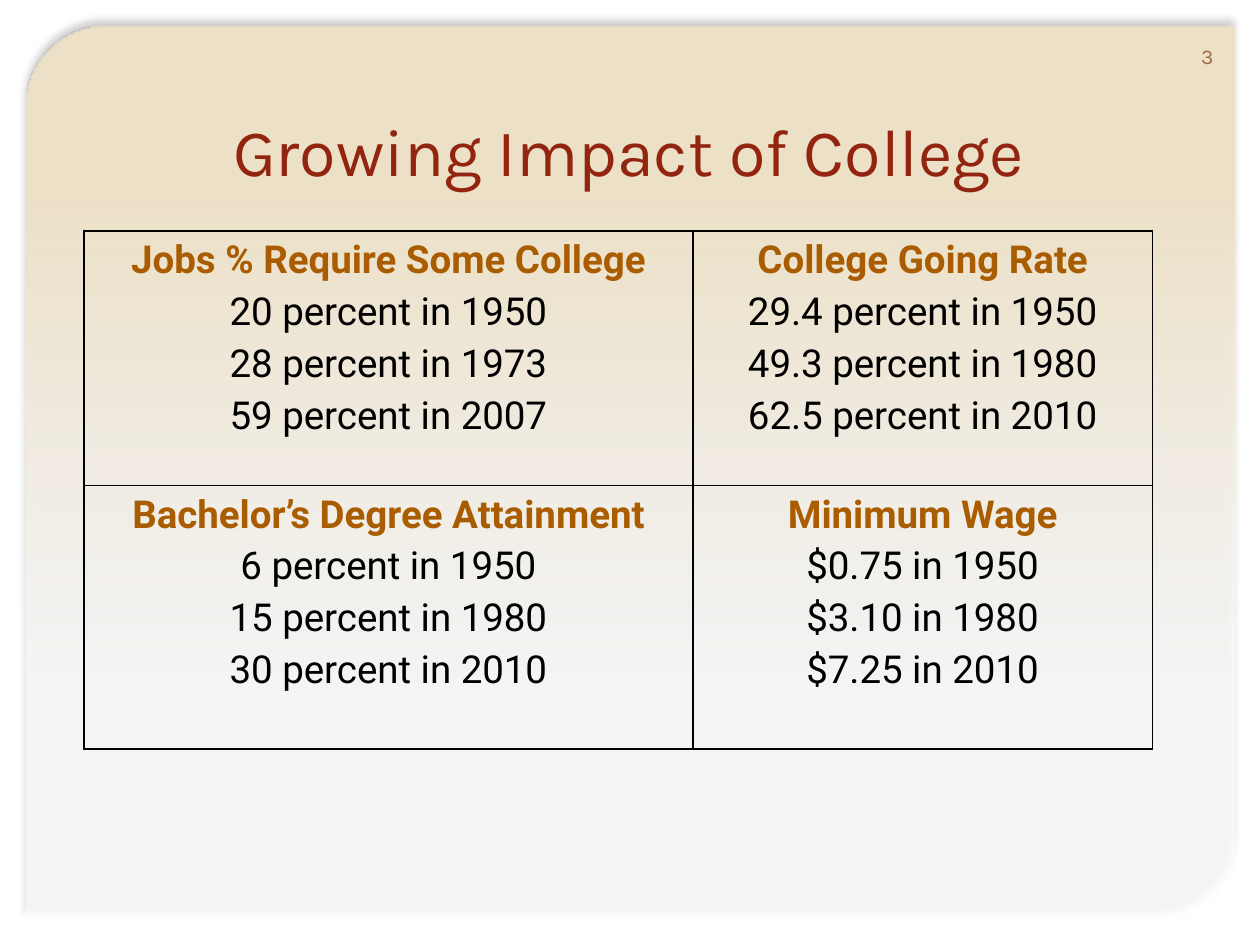
from lxml.etree import SubElement
from pptx import Presentation
from pptx.dml.color import RGBColor
from pptx.enum.shapes import MSO_SHAPE
from pptx.enum.text import MSO_ANCHOR, PP_ALIGN
from pptx.oxml.ns import qn
from pptx.util import Pt

COLORS = {
    "sand": "ECE0C6",
    "white": "FFFFFF",
    "title": "922410",
    "heading": "A95C00",
    "text": "000000",
    "number": "A46645",
}
FACTS = [
    [
        ["Jobs % Require Some College", "20 percent in 1950",
         "28 percent in 1973", "59 percent in 2007"],
        ["College Going Rate", "29.4 percent in 1950",
         "49.3 percent in 1980", "62.5 percent in 2010"],
    ],
    [
        ["Bachelor’s Degree Attainment", "6 percent in 1950",
         "15 percent in 1980", "30 percent in 2010"],
        ["Minimum Wage", "$0.75 in 1950", "$3.10 in 1980", "$7.25 in 2010"],
    ],
]


class Deck:
    display = "Karla"
    body = "Roboto"

    def __init__(self, width, height):
        self.prs = Presentation()
        self.prs.slide_width, self.prs.slide_height = Pt(width), Pt(height)
        self.s = self.prs.slides.add_slide(self.prs.slide_layouts[5])

    def rgb(self, name):
        return RGBColor.from_string(COLORS[name])

    def run(self, p, text, font, size, color, align, bold=False):
        p.alignment = align
        r = p.add_run()
        r.text = text
        r.font.name, r.font.size, r.font.bold = font, Pt(size), bold
        r.font.color.rgb = self.rgb(color)

    def panel(self, x, y, w, h):
        sp = self.s.shapes.add_shape(
            MSO_SHAPE.ROUND_2_DIAG_RECTANGLE, Pt(x), Pt(y), Pt(w), Pt(h))
        sp.adjustments[0], sp.adjustments[1] = 0.09, 0
        sp.line.fill.background()
        sp.fill.gradient()
        sp.fill.gradient_angle = 270
        stops = sp.fill.gradient_stops
        for stop, color, position in zip(stops, ("sand", "white"), (0.19, 0.73)):
            stop.color.rgb = self.rgb(color)
            stop.position = position
        pr = sp._element.spPr
        last = pr.findall(".//" + qn("a:srgbClr"))[-1]
        SubElement(last, qn("a:alpha"), val="67000")
        effects = SubElement(pr, qn("a:effectLst"))
        shadow = SubElement(effects, qn("a:outerShdw"), blurRad=str(Pt(4.2)),
                            dist=str(Pt(3)), dir="16200000", rotWithShape="0")
        black = SubElement(shadow, qn("a:srgbClr"), val=COLORS["text"])
        SubElement(black, qn("a:alpha"), val="20000")
        self.s.shapes._spTree.insert(2, sp._element)

    def title(self, text, x, y, w, h):
        sp = self.s.shapes.title
        sp.left, sp.top, sp.width, sp.height = Pt(x), Pt(y), Pt(w), Pt(h)
        tf = sp.text_frame
        tf.vertical_anchor = MSO_ANCHOR.BOTTOM
        self.run(tf.paragraphs[0], text, self.display, 38, "title", PP_ALIGN.CENTER)

    def number(self, text, x, y, w, h):
        tf = self.s.shapes.add_textbox(Pt(x), Pt(y), Pt(w), Pt(h)).text_frame
        tf.word_wrap = True
        tf.vertical_anchor = MSO_ANCHOR.MIDDLE
        self.run(tf.paragraphs[0], text, self.display, 12, "number", PP_ALIGN.RIGHT)

    def table(self, rows, x, y, widths, heights):
        tbl = self.s.shapes.add_table(
            len(heights), len(widths), Pt(x), Pt(y),
            Pt(sum(widths)), Pt(sum(heights))).table
        tbl.first_row = tbl.horz_banding = False
        for col, width in zip(tbl.columns, widths):
            col.width = Pt(width)
        for row, height, facts in zip(tbl.rows, heights, rows):
            row.height = Pt(height)
            for cell, lines in zip(row.cells, facts):
                self.cell(cell, lines)

    def cell(self, cell, lines):
        cell.margin_left = cell.margin_right = Pt(5)
        cell.margin_top = cell.margin_bottom = 0
        pr = cell._tc.get_or_add_tcPr()
        for side in ("lnL", "lnR", "lnT", "lnB"):
            ln = SubElement(pr, qn("a:" + side), w=str(Pt(1)))
            fill = SubElement(ln, qn("a:solidFill"))
            SubElement(fill, qn("a:srgbClr"), val=COLORS["text"])
        cell.fill.background()
        tf = cell.text_frame
        for i, line in enumerate(lines):
            p = tf.add_paragraph() if i else tf.paragraphs[0]
            p.line_spacing = 1.15
            self.run(p, line, self.body, 22, "text" if i else "heading",
                     PP_ALIGN.CENTER, bold=i == 0)


def main():
    deck = Deck(720, 540)
    deck.panel(15, 15, 690.5, 510.5)
    deck.title("Growing Impact of College", 61, 30, 597, 82)
    deck.table(FACTS, 48, 132, (348, 262.5), (145.5, 150.5))
    deck.number("3", 661.5, 17.5, 39, 29)
    deck.prs.save("out.pptx")


if __name__ == "__main__":
    main()
